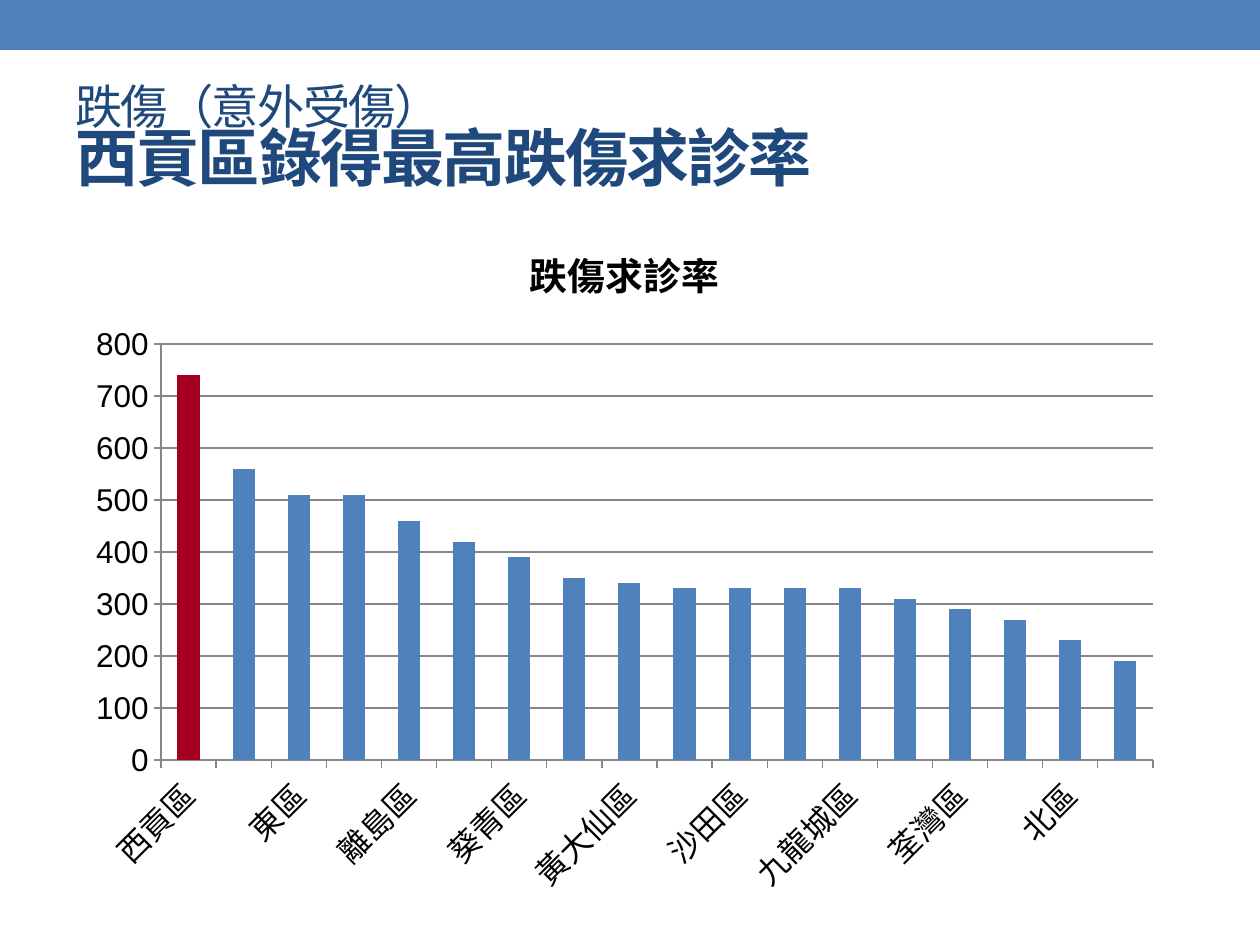
from pptx import Presentation
from pptx.chart.data import CategoryChartData
from pptx.dml.color import RGBColor
from pptx.enum.chart import XL_CHART_TYPE, XL_TICK_MARK
from pptx.enum.shapes import MSO_SHAPE
from pptx.enum.text import MSO_ANCHOR
from pptx.util import Pt

STACKED = XL_CHART_TYPE.COLUMN_STACKED
OUT = XL_TICK_MARK.OUTSIDE
RECT = MSO_SHAPE.RECTANGLE
MIDDLE = MSO_ANCHOR.MIDDLE
SCALE = 914400 / 126
COLORS = {"blue": "4F81BD", "navy": "1F497D", "red": "A50021",
          "black": "000000", "grey": "868686"}
RATES = {
    "西貢區": 740, "大埔區": 560, "東區": 510, "灣仔區": 510, "離島區": 460,
    "深水埗區": 420, "葵青區": 390, "觀塘區": 350, "黃大仙區": 340,
    "元朗區": 330, "沙田區": 330, "油尖旺區": 330, "九龍城區": 330,
    "屯門區": 310, "荃灣區": 290, "南區": 270, "北區": 230, "中西區": 190,
}


def px(*sizes):
    """Turn px lengths into EMU."""
    return [round(size * SCALE) for size in sizes]


def apply(target, values):
    """Set each named value on the target."""
    for name, value in values.items():
        setattr(target, name, value)


class Deck:
    """Hold the style and the current slide."""

    def __init__(self, width, height, face):
        """Open a deck with one blank slide."""
        self.show = Presentation()
        size = px(width, height)
        apply(self.show, dict(zip(("slide_width", "slide_height"), size)))
        self.face = face
        self.slide = self.show.slides.add_slide(self.show.slide_layouts[6])

    def paint(self, fill, color):
        """Make a fill solid in a named colour."""
        fill.solid()
        fill.fore_color.rgb = RGBColor.from_string(COLORS[color])

    def style(self, font, size, color, bold=False):
        """Give a font its face, size, weight and colour."""
        apply(font, {"name": self.face, "size": Pt(size), "bold": bold})
        font.color.rgb = RGBColor.from_string(COLORS[color])

    def band(self, box, color):
        """Draw a plain filled rectangle."""
        shape = self.slide.shapes.add_shape(RECT, *px(*box))
        shape.shadow.inherit = False
        self.paint(shape.fill, color)
        shape.line.fill.background()

    def title(self, box, lines, color):
        """Write the heading lines as one paragraph."""
        frame = self.slide.shapes.add_textbox(*px(*box)).text_frame
        apply(frame, {"word_wrap": True, "vertical_anchor": MIDDLE})
        para = frame.paragraphs[0]
        para.line_spacing = 0.8
        for row, (text, size, bold) in enumerate(lines):
            if row:
                para.add_line_break()
            run = para.add_run()
            run.text = text
            self.style(run.font, size, color, bold)
            run.font._element.set("spc", "-100")

    def chart(self, box, name, rates, color, accent):
        """Plot the rates as columns with the first one picked out."""
        data = CategoryChartData(number_format="0")
        data.categories = list(rates)
        data.add_series(name, list(rates.values()))
        chart = self.slide.shapes.add_chart(STACKED, *px(*box), data).chart
        apply(chart, {"has_legend": False, "has_title": True})
        self.style(chart.font, 18, "black")
        frame = chart.chart_title.text_frame
        frame.text = name
        self.style(frame.paragraphs[0].runs[0].font, 21.6, "black", True)
        plot = chart.plots[0]
        apply(plot, {"gap_width": 150, "overlap": 100,
                     "vary_by_categories": False})
        bars = plot.series[0]
        self.paint(bars.format.fill, color)
        self.paint(bars.points[0].format.fill, accent)
        axis = chart.value_axis
        apply(axis, {"minimum_scale": 0, "maximum_scale": 800,
                     "major_unit": 100, "has_major_gridlines": True})
        apply(axis.tick_labels, {"number_format": "0",
                                 "number_format_is_linked": False})
        for item in (axis, chart.category_axis):
            item.major_tick_mark = OUT
            self.paint(item.format.line.fill, "grey")
        self.paint(axis.major_gridlines.format.line.fill, "grey")


def main():
    """Build the slide and save it."""
    deck = Deck(1260, 945, "Arial")
    deck.band((0, 0, 1260, 50), "blue")
    deck.title((63, 73, 1134, 136),
               [("跌傷（意外受傷）", 27, False),
                ("西貢區錄得最高跌傷求診率", 36, True)], "navy")
    deck.chart((74, 214, 1101, 694), "跌傷求診率", RATES, "blue", "red")
    deck.show.save("out.pptx")


if __name__ == "__main__":
    main()
